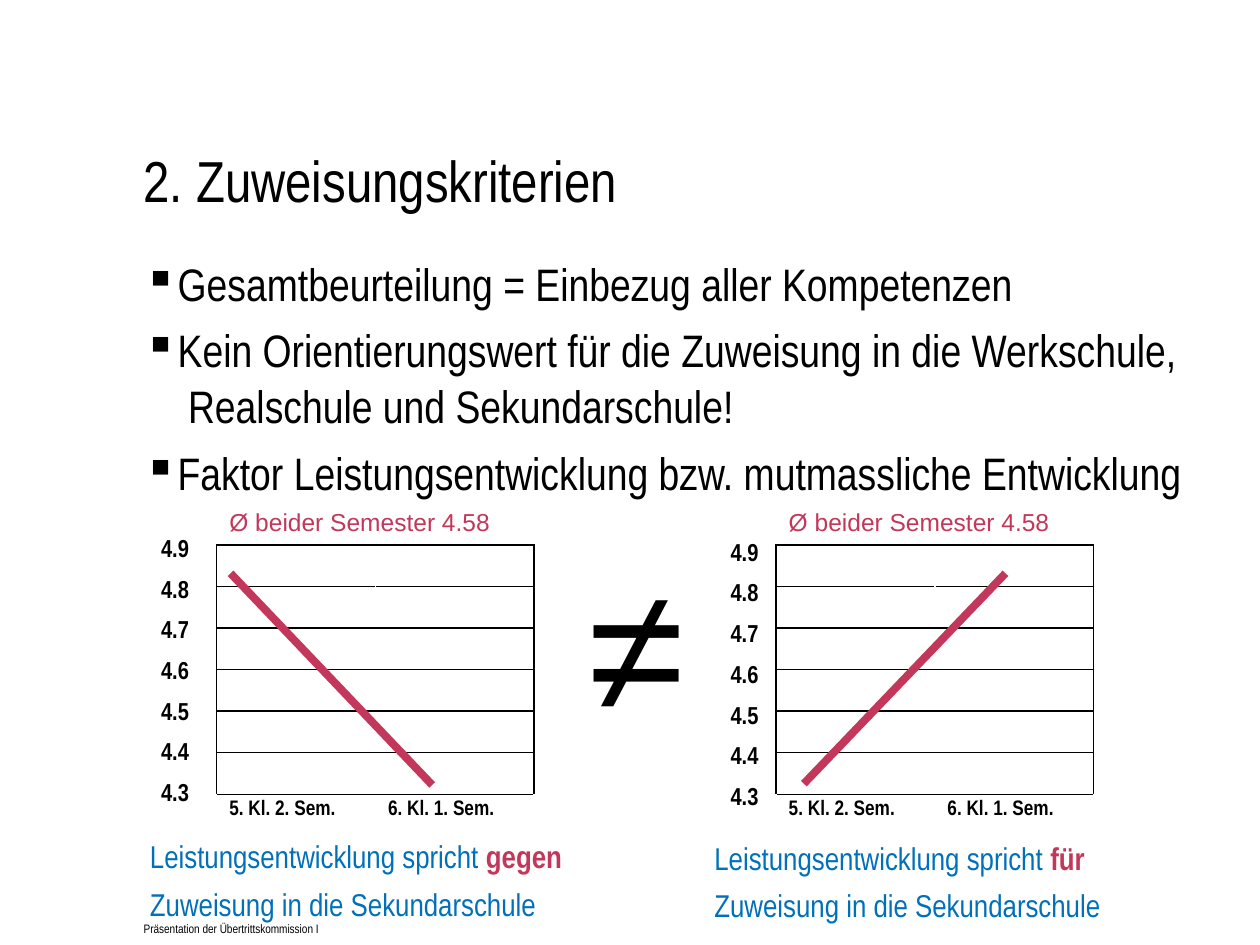
import pptx
import pptx.util
import pptx.dml.color
import pptx.enum.shapes
import pptx.enum.text
from lxml import etree
from pptx.oxml.ns import qn

deck = pptx.Presentation()
deck.slide_width = pptx.util.Inches(10)
deck.slide_height = pptx.util.Inches(7.5)
slide = deck.slides.add_slide(deck.slide_layouts[6])
shapes = slide.shapes
unit = deck.slide_width // 100
hue = pptx.dml.color.RGBColor.from_string
align = pptx.enum.text.PP_ALIGN
narrow, black, white, red, blue = "Arial Narrow", "000000", "FFFFFF", "C3375A", "0070B8"


def style(font, size, color=black, bold=False, name=narrow):
    font.name = name
    font.size = pptx.util.Pt(size)
    font.bold = bold
    font.color.rgb = hue(color)


def write(left, top, width, height, lines, size, bold=False, side=align.LEFT, lead=None):
    box = shapes.add_textbox(*[int(n * unit) for n in (left, top, width, height)])
    frame = box.text_frame
    frame.word_wrap = True
    frame.margin_left = frame.margin_right = frame.margin_top = frame.margin_bottom = 0
    for i, line in enumerate(lines):
        para = frame.paragraphs[0] if i == 0 else frame.add_paragraph()
        para.text = line
        para.alignment = side
        if lead:
            para.line_spacing = pptx.util.Pt(lead)
        style(para.font, size, bold=bold)
    return frame


write(11.4, 73.1, 51.2, 1.6, ["Präsentation der Übertrittskommission I"], 7)
write(11.4, 11.5, 85.1, 7.1, ["2. Zuweisungskriterien"], 33)

points = [
    "Gesamtbeurteilung = Einbezug aller Kompetenzen",
    "Kein Orientierungswert für die Zuweisung in die Werkschule,\v Realschule und Sekundarschule!",
    "Faktor Leistungsentwicklung bzw. mutmassliche Entwicklung",
]
body = write(11.4, 20.2, 85.1, 35.4, points, 26, lead=32)
for i, para in enumerate(body.paragraphs):
    if i:
        para.space_before = pptx.util.Pt(6)
    props = para._p.get_or_add_pPr()
    props.set("marL", str(int(2.7 * unit)))
    props.set("indent", str(int(-2.7 * unit)))
    mark = etree.Element(qn("a:buChar"), char="▪")
    props.find(qn("a:defRPr")).addprevious(mark)

sign = write(43.9, 49.4, 13.2, 16, ["≠"], 100, side=align.CENTER, lead=27)
sign.vertical_anchor = pptx.enum.text.MSO_ANCHOR.MIDDLE

panels = [
    (17.2, 11.9, 42.3, (18.3, 45.5, 34.3, 62.3), (11.9, 65.7, 35.8), "gegen"),
    (61.6, 57.1, 42.6, (63.8, 62.2, 79.8, 45.5), (56.7, 65.8, 35), "für"),
]
rows, cols = 8, 2
for left, axis, first, trend, note, word in panels:
    frame = shapes.add_table(rows, cols, *[int(n * unit) for n in (left, 39.9, 25.2, 26.4)])
    grid = frame.table
    grid.first_row = grid.horz_banding = False
    for r in range(rows):
        for c in range(cols):
            cell = grid.cell(r, c)
            plot = 0 < r < rows - 1
            edges = {
                "L": plot and (c == 0 or r == 1),
                "R": plot and (c == 1 or r == 1),
                "T": r > 0,
                "B": r < rows - 1,
            }
            props = cell._tc.get_or_add_tcPr()
            for edge, dark in edges.items():
                line = etree.SubElement(props, qn("a:ln" + edge), w="12700")
                fill = etree.SubElement(line, qn("a:solidFill"))
                etree.SubElement(fill, qn("a:srgbClr"), val=black if dark else white)
            cell.fill.solid()
            cell.fill.fore_color.rgb = hue(white)
            if plot:
                cell.margin_top = cell.margin_bottom = 0
    for r in (0, 1):
        grid.cell(r, 0).merge(grid.cell(r, 1))
    head = grid.cell(0, 0).text_frame.paragraphs[0]
    head.text = "Ø beider Semester 4.58"
    style(head.font, 14, red, name="Arial")
    for c, term in enumerate(["5. Kl. 2. Sem.", "6. Kl. 1. Sem."]):
        para = grid.cell(rows - 1, c).text_frame.paragraphs[0]
        para.text = term
        style(para.font, 12, bold=True)

    for i in range(7):
        write(axis, first + 3.23 * i, 3.1, 2.4, [f"{4.9 - i / 10:.1f}"], 14, True, align.RIGHT)

    ends = [int(n * unit) for n in trend]
    line = shapes.add_connector(pptx.enum.shapes.MSO_CONNECTOR.STRAIGHT, *ends)
    line.line.color.rgb = hue(red)
    line.line.width = pptx.util.Pt(4.5)
    etree.SubElement(line._element.spPr, qn("a:effectLst"))

    para = write(*note, 8.5, [""], 18, lead=27).paragraphs[0]
    parts = [
        ("Leistungsentwicklung spricht ", blue, False),
        (word, red, True),
        (" Zuweisung in die Sekundarschule", blue, False),
    ]
    for text, color, bold in parts:
        run = para.add_run()
        run.text = text
        style(run.font, 18, color, bold)

deck.save("out.pptx")
